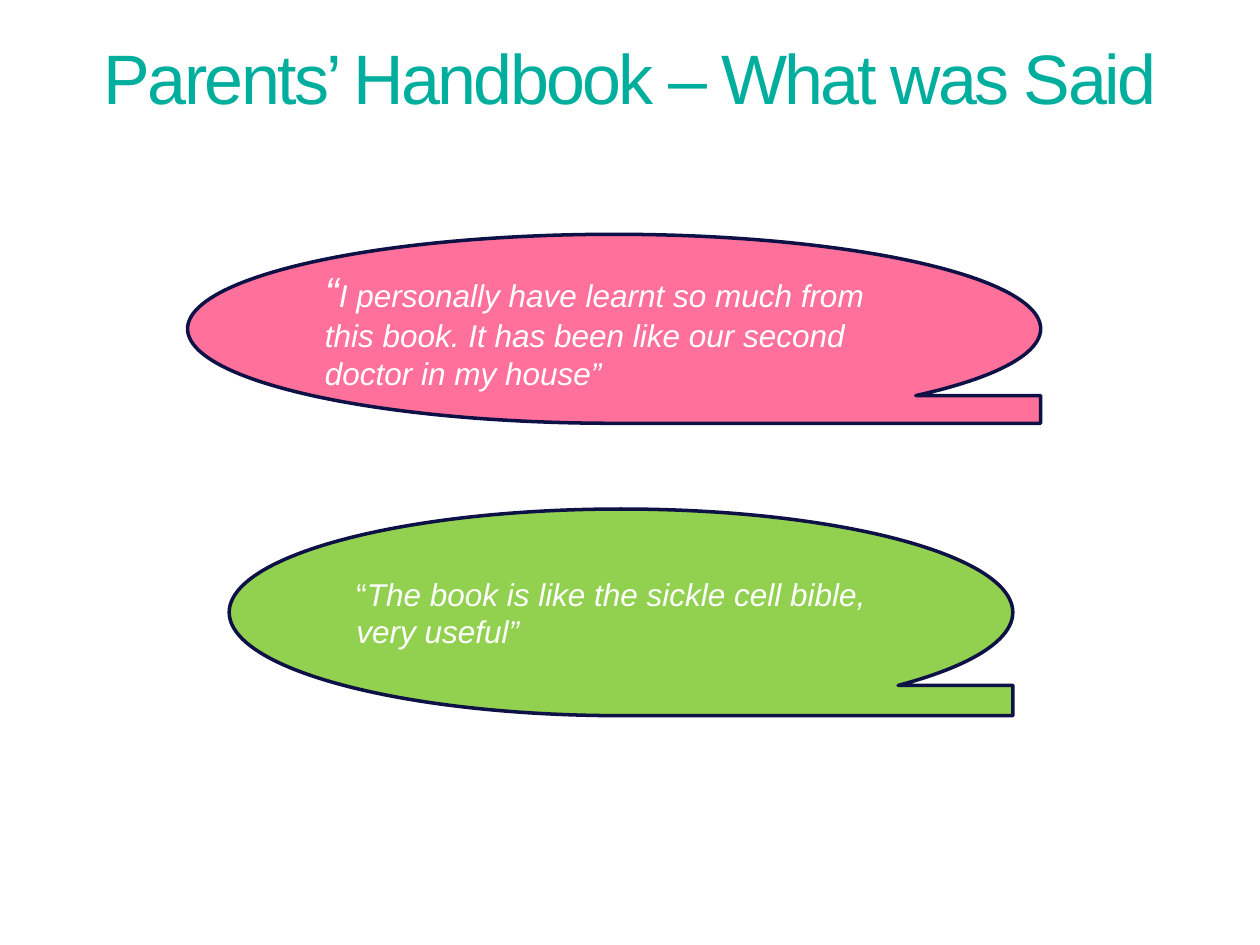
from dataclasses import dataclass

from pptx import Presentation
from pptx.dml.color import RGBColor as Rgb
from pptx.enum import shapes, text
from pptx.util import Pt


@dataclass(frozen=True)
class Theme:
    font: str = "Arial"
    teal: str = "00AE9E"
    pink: str = "FF709B"
    green: str = "92D050"
    navy: str = "0D1146"
    white: str = "FFFFFF"
    head: int = 40
    large: int = 24
    quote: int = 18


THEME = Theme()


def add_text(para, words, size, color, italic=False, space=None):
    """Add a formatted run; space is the letter spacing in points."""
    run = para.add_run()
    run.text = words
    font = run.font
    font.name, font.size, font.italic = THEME.font, Pt(size), italic
    font.color.rgb = Rgb.from_string(color)
    if space is not None:
        run._r.get_or_add_rPr().set("spc", str(round(space * 100)))


def place(shape, box):
    shape.left, shape.top, shape.width, shape.height = map(Pt, box)


def add_title(slide, words, box):
    title = slide.shapes.title
    place(title, box)
    frame = title.text_frame
    frame.margin_left = frame.margin_right = 0
    frame.margin_top = frame.margin_bottom = 0
    frame.word_wrap = True
    frame.auto_size = text.MSO_AUTO_SIZE.NONE
    frame.vertical_anchor = text.MSO_ANCHOR.MIDDLE
    para = frame.paragraphs[0]
    para.alignment = text.PP_ALIGN.CENTER
    add_text(para, words, THEME.head, THEME.teal, space=-1.5)


def add_quote(slide, box, fill, words, **mark):
    """Add a speech bubble; mark formats its opening quotation mark."""
    kind = shapes.MSO_SHAPE.FLOWCHART_SEQUENTIAL_ACCESS_STORAGE
    bubble = slide.shapes.add_shape(kind, *map(Pt, box))
    bubble.shadow.inherit = False
    bubble.fill.solid()
    bubble.fill.fore_color.rgb = Rgb.from_string(fill)
    bubble.line.color.rgb = Rgb.from_string(THEME.navy)
    bubble.line.width = Pt(2)
    frame = bubble.text_frame
    frame.word_wrap = True
    frame.vertical_anchor = text.MSO_ANCHOR.MIDDLE
    para = frame.paragraphs[0]
    para.alignment = text.PP_ALIGN.LEFT
    add_text(para, "“", color=THEME.white, **mark)
    add_text(para, words, THEME.quote, THEME.white, italic=True)


def main():
    deck = Presentation()
    deck.slide_width, deck.slide_height = Pt(720), Pt(540)
    slide = deck.slides.add_slide(deck.slide_layouts[5])
    add_title(slide, " Parents’ Handbook – What was Said ",
              (43.9, 18, 632.2, 51.1))
    add_quote(slide, (107.2, 133.9, 487.5, 108), THEME.pink,
              "I personally have learnt so much from this book. "
              "It has been like our second doctor in my house”",
              size=THEME.large, italic=True)
    add_quote(slide, (131, 290.9, 447.8, 118.1), THEME.green,
              "The book is like the sickle cell bible, very useful”",
              size=THEME.quote)
    deck.save("out.pptx")


if __name__ == "__main__":
    main()
